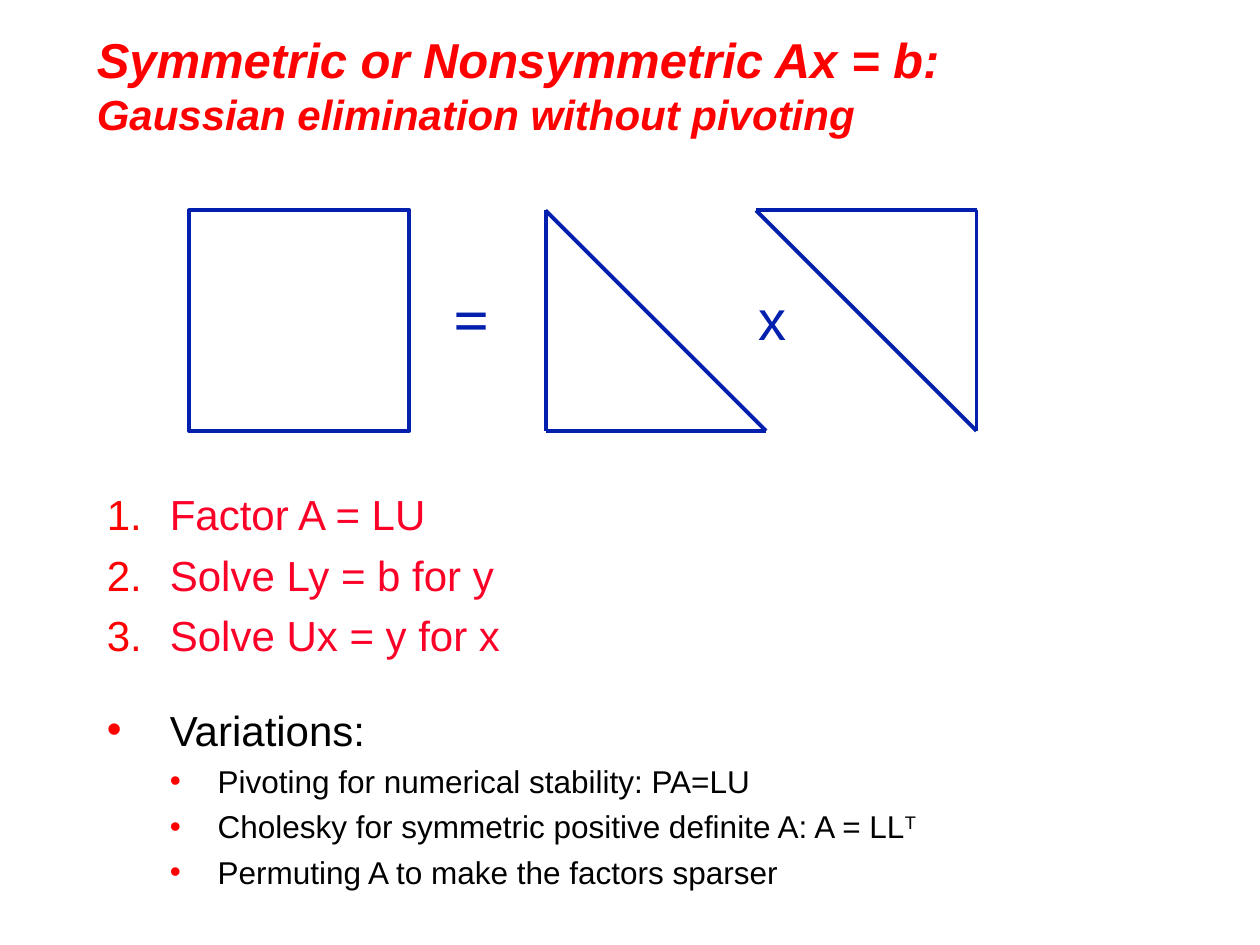
from dataclasses import dataclass

from lxml import etree
from pptx import Presentation
from pptx import util as u
from pptx.dml.color import RGBColor
from pptx.enum import shapes, text
from pptx.oxml.ns import qn


@dataclass(frozen=True)
class Theme:
    title: str = "FF0000"
    step: str = "FC0128"
    body: str = "000000"
    mark: str = "FF0000"
    line: str = "021FAE"
    sans: str = "Arial"
    serif: str = "Times New Roman"
    head: int = 28
    main: int = 24
    sub: int = 18
    equal: int = 36
    times: int = 32
    width: float = 2.25
    lead: float = 0.24


@dataclass(frozen=True)
class Run:
    words: str
    size: int
    color: str
    font: str = "Arial"
    bold: bool = False
    slant: bool = False
    base: int = 0


@dataclass(frozen=True)
class Item:
    runs: tuple[Run, ...]
    level: int = 0
    number: bool = False
    gap: float = 0


@dataclass(frozen=True)
class Box:
    left: float
    top: float
    width: float
    height: float


THEME = Theme()
SIDE = 1.75
TOP = 1.67
LOW = TOP + SIDE


def add_run(para, run: Run) -> None:
    part = para.add_run()
    part.text = run.words
    font = part.font
    font.name, font.size = run.font, u.Pt(run.size)
    font.bold, font.italic = run.bold, run.slant
    font.color.rgb = RGBColor.from_string(run.color)
    if run.base:
        part.font._element.set("baseline", str(run.base * 1000))


def add_box(slide, box: Box, wrap: bool = True):
    shape = slide.shapes.add_textbox(*(
        u.Inches(n) for n in (box.left, box.top, box.width, box.height)))
    shape.text_frame.word_wrap = wrap
    return shape.text_frame


def add_mark(para, item: Item) -> None:
    left, hang = ((0.5, 0.5), (0.88, 0.38))[item.level]
    props = para._p.get_or_add_pPr()
    props.set("marL", str(u.Inches(left)))
    props.set("indent", str(-u.Inches(hang)))
    color = etree.SubElement(props, qn("a:buClr"))
    etree.SubElement(color, qn("a:srgbClr")).set("val", THEME.mark)
    etree.SubElement(props, qn("a:buFont")).set("typeface", THEME.sans)
    if item.number:
        etree.SubElement(props, qn("a:buAutoNum")).set("type", "arabicPeriod")
    else:
        etree.SubElement(props, qn("a:buChar")).set("char", "•")


def add_list(slide, box: Box, items: list[Item]) -> None:
    frame = add_box(slide, box)
    for i, item in enumerate(items):
        para = frame.add_paragraph() if i else frame.paragraphs[0]
        para.level = item.level
        para.space_before = u.Pt(item.gap or round(item.runs[0].size * THEME.lead, 1))
        add_mark(para, item)
        for run in item.runs:
            add_run(para, run)


def set_line(shape) -> None:
    shape.line.color.rgb = RGBColor.from_string(THEME.line)
    shape.line.width = u.Pt(THEME.width)


def add_factor(slide, points: list[tuple[float, float]]) -> None:
    group = slide.shapes.add_group_shape()
    for start, end in zip(points, points[1:] + points[:1]):
        edge = group.shapes.add_connector(
            shapes.MSO_CONNECTOR.STRAIGHT, *(u.Inches(n) for n in start + end))
        set_line(edge)
        etree.SubElement(edge._element.spPr, qn("a:effectLst"))


def add_title(slide) -> None:
    frame = add_box(slide, Box(0.67, 0.17, 8.17, 1))
    frame.vertical_anchor = text.MSO_ANCHOR.MIDDLE
    para = frame.paragraphs[0]
    add_run(para, Run("Symmetric or Nonsymmetric Ax = b:", THEME.head,
                      THEME.title, bold=True, slant=True))
    para.add_line_break()
    add_run(para, Run("Gaussian elimination without pivoting", THEME.main,
                      THEME.title, bold=True, slant=True))


def add_square(slide) -> None:
    square = slide.shapes.add_shape(
        shapes.MSO_SHAPE.RECTANGLE, u.Inches(1.5), u.Inches(TOP),
        u.Inches(SIDE), u.Inches(SIDE))
    square.shadow.inherit = False
    square.fill.background()
    set_line(square)


def main() -> None:
    deck = Presentation()
    deck.slide_width, deck.slide_height = u.Inches(10), u.Inches(7.5)
    slide = deck.slides.add_slide(deck.slide_layouts[6])

    add_title(slide)
    steps = ["Factor A = LU", "Solve Ly = b for y", "Solve Ux = y for x"]
    items = [Item((Run(step, THEME.main, THEME.step),), number=True)
             for step in steps]
    items.append(Item((Run("Variations:", THEME.main, THEME.body),), gap=25))
    kinds = [
        ("Pivoting for numerical stability: PA=LU", ""),
        ("Cholesky for symmetric positive definite A: A = LL", "T"),
        ("Permuting A to make the factors sparser", ""),
    ]
    for words, power in kinds:
        runs = (Run(words, THEME.sub, THEME.body),)
        if power:
            runs += (Run(power, THEME.sub, THEME.body, base=30),)
        items.append(Item(runs, level=1))
    add_list(slide, Box(0.75, 3.83, 9, 3.33), items)

    add_square(slide)
    lower, upper = 4.33, 6
    add_factor(slide, [(lower, TOP), (lower, LOW), (lower + SIDE, LOW)])
    add_factor(slide, [(upper + SIDE, LOW), (upper + SIDE, TOP), (upper, TOP)])

    signs = [
        (Box(3.5, 2.17, 0.49, 0.7),
         Run("=", THEME.equal, THEME.line, THEME.serif, bold=True)),
        (Box(5.92, 2.21, 0.42, 0.63), Run("x", THEME.times, THEME.line)),
    ]
    for box, run in signs:
        add_run(add_box(slide, box, wrap=False).paragraphs[0], run)

    deck.save("out.pptx")


if __name__ == "__main__":
    main()
